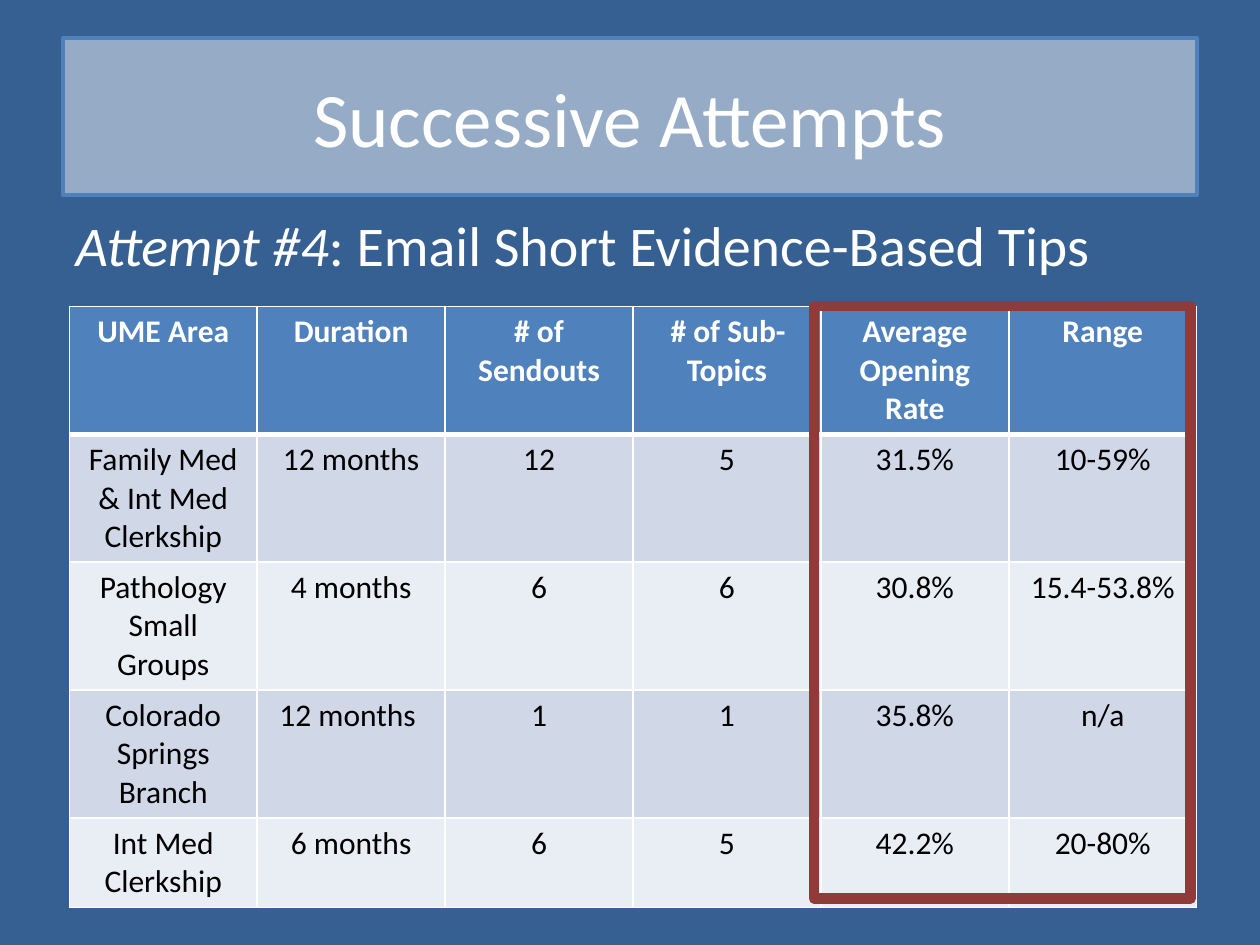
from pptx import Presentation
from pptx.dml.color import RGBColor
from pptx.enum.shapes import MSO_SHAPE as Shape
from pptx.enum.text import PP_ALIGN as Align, MSO_ANCHOR as Anchor
from pptx.oxml.ns import qn
from pptx.util import Pt
from lxml.etree import SubElement, Element

# Content
TITLE = "Successive Attempts"
LEAD = [("Attempt #4", True), (": Email Short Evidence-Based Tips", False)]
ROWS = [
    ("UME Area", "Duration", "# of Sendouts", "# of Sub-Topics",
     "Average Opening Rate", "Range"),
    ("Family Med & Int Med Clerkship", "12 months", "12", "5", "31.5%", "10-59%"),
    ("Pathology Small Groups", "4 months", "6", "6", "30.8%", "15.4-53.8%"),
    ("Colorado Springs Branch", "12 months ", "1", "1", "35.8%", "n/a"),
    ("Int Med Clerkship", "6 months", "6", "5", "42.2%", "20-80%"),
]
HEIGHTS = [63.4] * 4 + [45.4]
COL = 107.4
LEFT, TOP = 39.6, 175
WHITE, BLUE, RED = "FFFFFF", "4F81BD", "8E3B39"
BANDS = ["D0D8E8", "E9EDF4"]


def color(code):
    return RGBColor.from_string(code)


def paint(obj, code):
    obj.fill.solid()
    obj.fill.fore_color.rgb = color(code)


def outline(shape, code, width):
    shape.line.color.rgb = color(code)
    shape.line.width = Pt(width)


def place(shape, *box):
    shape.left, shape.top, shape.width, shape.height = map(Pt, box)


def style(run, size, code, bold=False, italic=False):
    font = run.font
    font.name, font.size = "Calibri", Pt(size)
    font.bold, font.italic = bold, italic
    font.color.rgb = color(code)


def border(cell, widths):
    props = cell._tc.get_or_add_tcPr()
    for i, (side, width) in enumerate(zip("LRTB", widths)):
        line = Element(qn(f"a:ln{side}"), w=str(Pt(width)))
        fill = SubElement(line, qn("a:solidFill"))
        SubElement(fill, qn("a:srgbClr"), val=WHITE)
        props.insert(i, line)


deck = Presentation()
deck.slide_width, deck.slide_height = Pt(720), Pt(540)
slide = deck.slides.add_slide(deck.slide_layouts[1])
paint(slide.background, "376092")

# Title on a half-clear panel
title, body = slide.placeholders
place(title, 36, 21.6, 648, 90)
paint(title, WHITE)
tint = title.fill._xPr.find(qn("a:solidFill"))[0]
SubElement(tint, qn("a:alpha"), val="48000")
outline(title, BLUE, 2)
title.text_frame.text = TITLE
title.text_frame.vertical_anchor = Anchor.MIDDLE
head = title.text_frame.paragraphs[0]
head.alignment = Align.CENTER
style(head.runs[0], 44, WHITE)

# Lead line without a bullet
place(body, 36, 116.6, 648, 356.4)
lead = body.text_frame.paragraphs[0]
for text, slant in LEAD:
    run = lead.add_run()
    run.text = text
    style(run, 32, WHITE, italic=slant)
props = lead._p.get_or_add_pPr()
props.set("marL", "0")
props.set("indent", "0")
SubElement(props, qn("a:buNone"))

# Results table
table = slide.shapes.add_table(
    len(ROWS), len(ROWS[0]), Pt(LEFT), Pt(TOP),
    Pt(COL * len(ROWS[0])), Pt(sum(HEIGHTS))).table
for col in table.columns:
    col.width = Pt(COL)
for r, (row, height) in enumerate(zip(ROWS, HEIGHTS)):
    table.rows[r].height = Pt(height)
    for c, text in enumerate(row):
        cell = table.cell(r, c)
        cell.text_frame.text = text
        para = cell.text_frame.paragraphs[0]
        para.alignment = Align.CENTER
        style(para.runs[0], 18, "000000" if r else WHITE, bold=r == 0)
        paint(cell, BANDS[(r - 1) % 2] if r else BLUE)
        border(cell, (1, 1, 3 if r == 1 else 1, 1 if r else 3))

# Frame around the last two columns
frame = slide.shapes.add_shape(
    Shape.RECTANGLE, Pt(465.1), Pt(TOP), Pt(215.3), Pt(338.4))
frame.shadow.inherit = False
frame.fill.background()
outline(frame, RED, 6)

deck.save("out.pptx")
